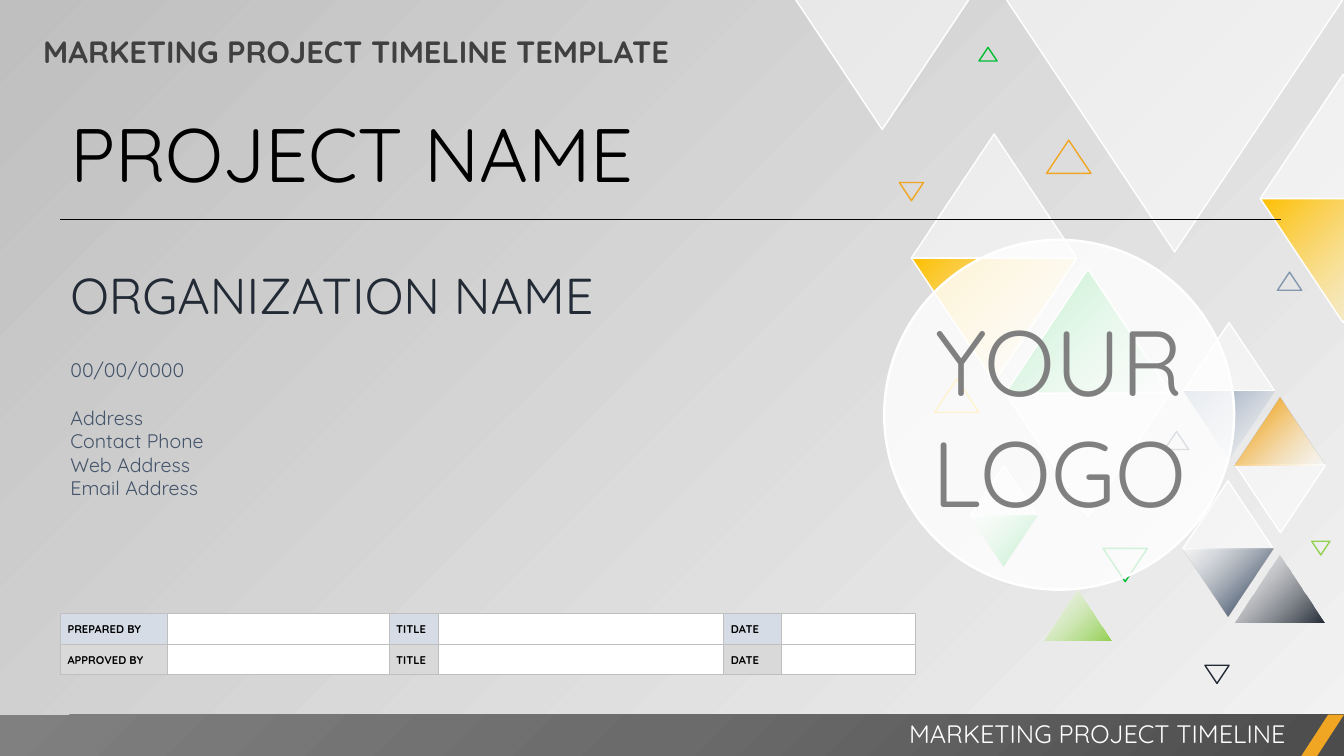
from copy import deepcopy
from dataclasses import dataclass

from lxml.etree import SubElement
from pptx import Presentation
from pptx.dml.color import RGBColor
from pptx.enum.shapes import MSO_CONNECTOR, MSO_SHAPE
from pptx.enum.text import MSO_ANCHOR, PP_ALIGN
from pptx.oxml.ns import qn
from pptx.util import Pt

PX = 9144


@dataclass(frozen=True)
class Theme:
    font: str = "Quicksand"
    white: str = "FFFFFF"
    black: str = "000000"
    charcoal: str = "404040"
    gray: str = "808080"
    mid_gray: str = "6B6B6B"
    dark_gray: str = "4C4C4C"
    silver: str = "BFBFBF"
    light: str = "D9D9D9"
    pale: str = "F2F2F2"
    ice: str = "D6DCE5"
    navy: str = "222A35"
    slate: str = "44546A"
    steel: str = "8497B0"
    gold: str = "FFC000"
    amber: str = "F0A622"
    green: str = "00BD32"
    lime: str = "92D050"
    logo: int = 66
    project: int = 54
    organization: int = 36
    heading: int = 22
    footer: int = 18
    body: int = 14
    label: int = 8


T = Theme()

GLASS = [
    (904, 133, 164, False), (997, 390, 164, True), (997, -2, 336, True),
    (1173, 477, 90, False), (1174, 320, 90, False), (1225, 461, 90, True),
    (962, 462, 67, False), (1250, 74, 164, False), (788, -2, 174, True),
]
FADE_OUT = [
    (904, 256, 164, True, T.gold, T.white), (1250, 197, 164, True, T.gold, T.white),
    (1224, 550, 90, False, T.navy, None), (1174, 388, 90, True, T.steel, None),
    (1035, 585, 67, False, T.lime, None),
]
FADE_IN = [
    (997, 267, 164, False, T.green, T.white), (1173, 544, 90, True, T.slate, None),
    (1225, 394, 90, False, T.amber, None), (962, 512, 67, True, T.green, None),
]
OUTLINES = [
    (1094, 544, 44, True, T.green), (927, 376, 44, False, T.gold),
    (1155, 428, 24, False, T.slate), (1195, 660, 24, True, T.navy),
    (892, 181, 24, True, T.amber), (1267, 270, 24, False, T.steel),
    (971, 47, 18, False, T.green), (1301, 537, 18, True, T.lime),
    (1038, 139, 44, False, T.amber),
]


def px(*lengths):
    return [round(n * PX) for n in lengths]


def rgb(color):
    return RGBColor.from_string(color)


def set_alpha(element, alphas):
    for clr, alpha in zip(element.iter(qn("a:srgbClr")), alphas):
        if alpha < 100:
            SubElement(clr, qn("a:alpha")).set("val", str(alpha * 1000))


def paint_gradient(fill, element, stops):
    fill.gradient()
    fill.gradient_angle = 135
    gs_list = next(element.iter(qn("a:gsLst")))
    for _ in stops[2:]:
        gs_list.append(deepcopy(gs_list[0]))
    for stop, (position, color, _) in zip(fill.gradient_stops, stops):
        stop.position = position / 100
        stop.color.rgb = rgb(color)
    set_alpha(element, [alpha for _, _, alpha in stops])


def add_shape(shapes, kind, box, color=None, alpha=100, stops=None, line=None, width=1):
    sp = shapes.add_shape(kind, *px(*box))
    sp.shadow.inherit = False
    if stops:
        paint_gradient(sp.fill, sp._element.spPr, stops)
    elif color:
        sp.fill.solid()
        sp.fill.fore_color.rgb = rgb(color)
        set_alpha(sp._element.spPr, [alpha])
    else:
        sp.fill.background()
    if line:
        sp.line.color.rgb = rgb(line)
        sp.line.width = Pt(width)
    else:
        sp.line.fill.background()
    return sp


def write(p, text, size, color, bold=False, align=PP_ALIGN.LEFT, before=0, spacing=None):
    p.alignment = align
    p.space_before = Pt(before)
    p.line_spacing = spacing
    r = p.add_run()
    r.text = text
    r.font.name = T.font
    r.font.size = Pt(size)
    r.font.bold = bold
    r.font.color.rgb = rgb(color)


def add_text(s, box, text, size, color, **style):
    tf = s.shapes.add_textbox(*px(*box)).text_frame
    tf.word_wrap = True
    write(tf.paragraphs[0], text, size, color, **style)
    return tf


def add_triangle(shapes, x, y, w, flipped, **style):
    sp = add_shape(shapes, MSO_SHAPE.ISOSCELES_TRIANGLE, (x, y, w, w * 0.75), **style)
    sp.rotation = 180 if flipped else 0


def add_triangles(s):
    shapes = s.shapes.add_group_shape().shapes
    for spot in GLASS:
        add_triangle(shapes, *spot, color=T.white, alpha=50, line=T.white)
    for *spot, color, line in FADE_OUT:
        stops = [(0, color, 100), (100, T.white, 50)]
        add_triangle(shapes, *spot, stops=stops, line=line)
    for *spot, color, line in FADE_IN:
        stops = [(0, T.white, 50), (82, color, 100)]
        add_triangle(shapes, *spot, stops=stops, line=line)
    for *spot, line in OUTLINES:
        add_triangle(shapes, *spot, line=line)


def add_footer(s, x, y, w, h):
    stops = [(0, T.dark_gray, 100), (50, T.mid_gray, 100), (100, T.gray, 100)]
    bar = add_shape(s.shapes, MSO_SHAPE.RECTANGLE, (x, y, w, h), stops=stops)
    grad = bar._element.spPr.find(qn("a:gradFill"))
    grad.remove(grad.find(qn("a:lin")))
    radial = SubElement(grad, qn("a:path"))
    radial.set("path", "circle")
    focus = SubElement(radial, qn("a:fillToRect"))
    focus.set("l", "100000")
    focus.set("t", "100000")
    accent = add_shape(s.shapes, MSO_SHAPE.PARALLELOGRAM, (x + w - 43, y, 43, h), T.amber)
    accent.adjustments[0] = 0.65
    add_text(s, (x + 525, y - 1, 760, 40), "MARKETING PROJECT TIMELINE",
             T.footer, T.white, align=PP_ALIGN.RIGHT)


def add_project(s, x, y, w):
    add_text(s, (x, y, w, 101), "PROJECT NAME", T.project, T.black)
    tf = add_text(s, (x, y + 156, 890, 246), "ORGANIZATION NAME", T.organization, T.navy)
    details = [("00/00/0000", 24), ("Address", 17), ("Contact Phone", 0),
               ("Web Address", 0), ("Email Address", 0)]
    for text, before in details:
        write(tf.add_paragraph(), text, T.body, T.slate, before=before)
    rule = s.shapes.add_connector(MSO_CONNECTOR.STRAIGHT, *px(x, y + 117, x + 1211, y + 117))
    rule.line.color.rgb = rgb(T.black)
    rule.line.width = Pt(0.5)
    SubElement(rule._element.spPr, qn("a:effectLst"))


def add_logo(s, x, y, d):
    sp = add_shape(s.shapes, MSO_SHAPE.OVAL, (x, y, d, d), T.white, 81, line=T.white, width=1.75)
    tf = sp.text_frame
    tf.word_wrap = False
    tf.vertical_anchor = MSO_ANCHOR.MIDDLE
    tf.margin_left = tf.margin_right = tf.margin_top = tf.margin_bottom = 0
    for p, text in ((tf.paragraphs[0], "YOUR"), (tf.add_paragraph(), "LOGO")):
        write(p, text, T.logo, T.gray, align=PP_ALIGN.CENTER)


def add_borders(cell):
    tc_pr = cell._tc.get_or_add_tcPr()
    for side in ("lnL", "lnR", "lnT", "lnB"):
        ln = SubElement(tc_pr, qn(f"a:{side}"), w=str(Pt(1)))
        SubElement(SubElement(ln, qn("a:solidFill")), qn("a:srgbClr")).set("val", T.silver)


def add_signoff(s, x, y, row_height):
    widths = [106, 220, 49, 283, 57, 133]
    rows = [("PREPARED BY", T.ice), ("APPROVED BY", T.light)]
    box = px(x, y, sum(widths), row_height * len(rows))
    table = s.shapes.add_table(len(rows), len(widths), *box).table
    table.first_row = table.horz_banding = False
    for column, width in zip(table.columns, px(*widths)):
        column.width = width
    for i, (signer, shade) in enumerate(rows):
        for j, text in enumerate((signer, "", "TITLE", "", "DATE", "")):
            cell = table.cell(i, j)
            cell.margin_left, cell.margin_right = px(7, 7)
            cell.margin_top = cell.margin_bottom = 0
            cell.vertical_anchor = MSO_ANCHOR.MIDDLE
            write(cell.text_frame.paragraphs[0], text, T.label, T.black, bold=True, spacing=1.07)
            add_borders(cell)
            cell.fill.solid()
            cell.fill.fore_color.rgb = rgb(shade if text else T.white)


def main():
    prs = Presentation()
    prs.slide_width, prs.slide_height = px(1333, 750)
    s = prs.slides.add_slide(prs.slide_layouts[6])
    paint_gradient(s.background.fill, s._element, [(0, T.pale, 40), (100, T.silver, 100)])
    add_triangles(s)
    add_text(s, (33, 28, 861, 47), "MARKETING PROJECT TIMELINE TEMPLATE",
             T.heading, T.charcoal, bold=True)
    add_footer(s, 0, 709, 1333, 42)
    add_project(s, 60, 101, 1227)
    add_logo(s, 877, 238, 347)
    add_signoff(s, 60, 609, 30)
    prs.save("out.pptx")


if __name__ == "__main__":
    main()
